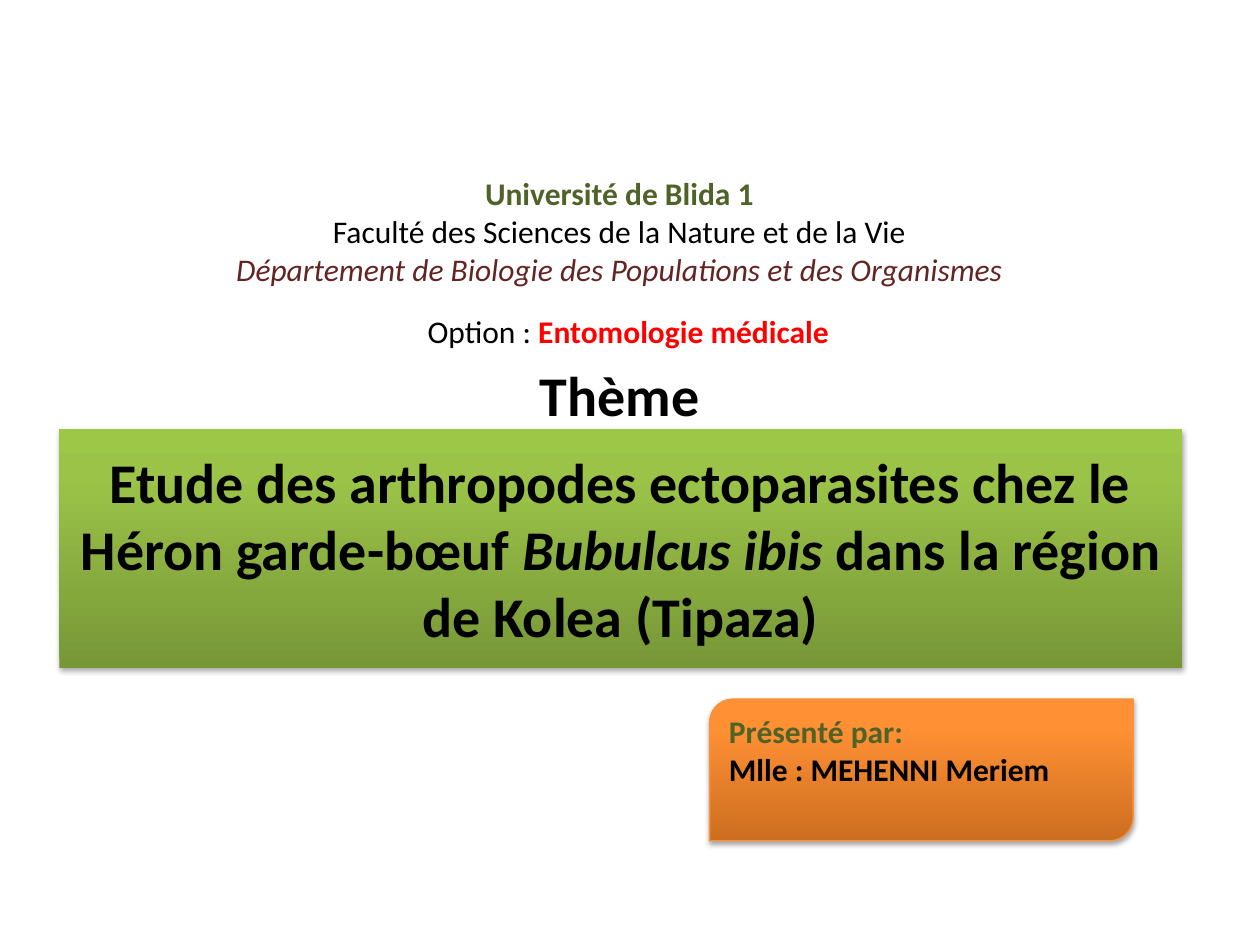
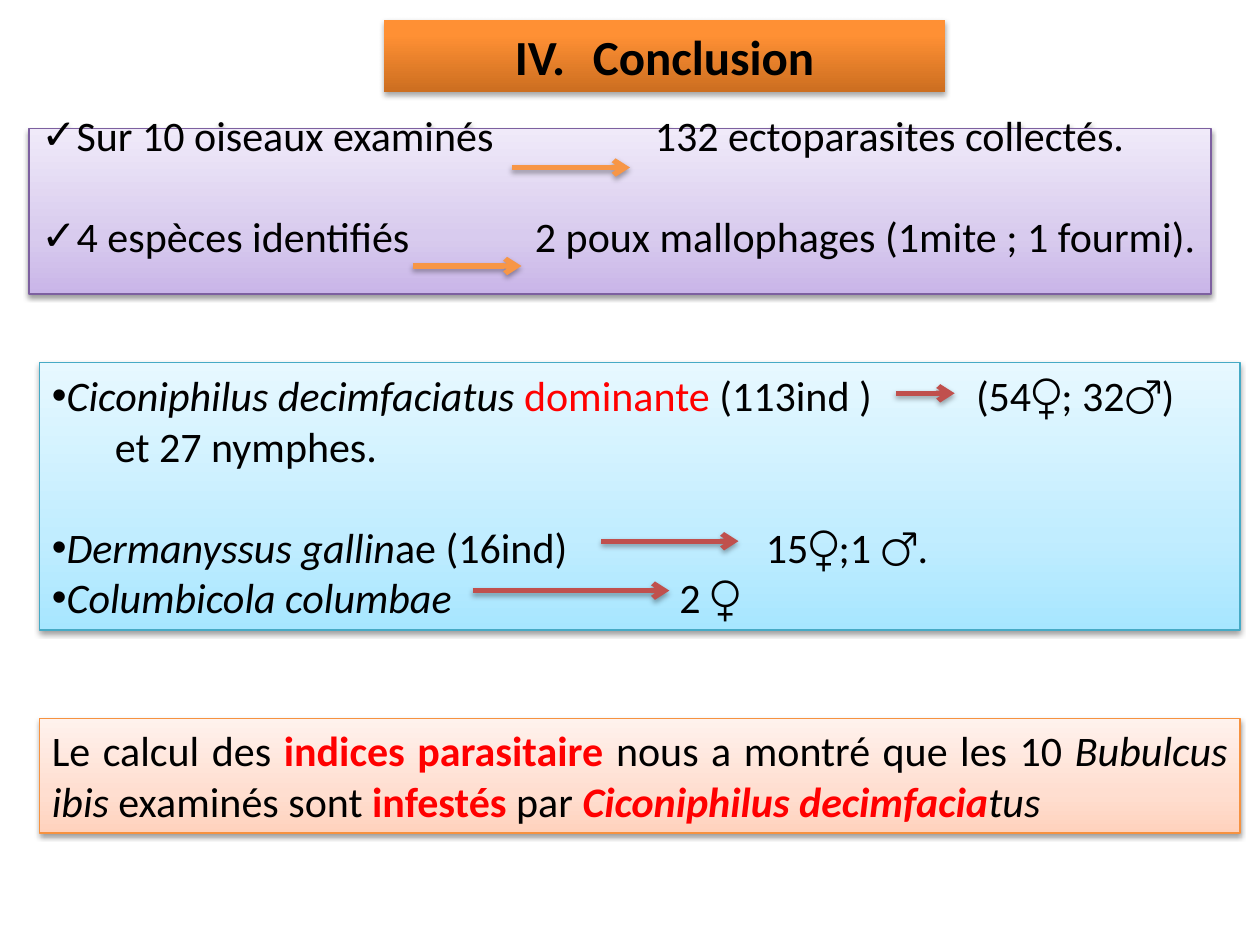
"""Build a thesis title slide and its conclusion slide."""
from copy import deepcopy
from dataclasses import dataclass

from lxml import etree
from pptx import Presentation
from pptx import util as u
from pptx.dml.color import RGBColor
from pptx.enum import shapes, text
from pptx.oxml.ns import qn


@dataclass(frozen=True)
class Theme:
    font = "Calibri"
    small, body, heading, display = 18, 24, 28, 32
    black, red, olive, maroon = "000000", "FF0000", "4F6228", "632523"
    arrow_orange, arrow_red = "F79646", "C0504D"
    orange_line, purple_line, blue_line = "F69240", "7D60A0", "46AAC5"
    green = ((0, "779737"), (0.8, "9BC348"), (1, "9DC746"))
    orange = ((0, "CC6E20"), (0.8, "FF9034"), (1, "FF9136"))
    purple = ((0, "C9B5E8"), (0.35, "D8CBEE"), (1, "F0EAF9"))
    blue = ((0, "A7E6FF"), (0.35, "C1EDFF"), (1, "E7F8FF"))
    peach = ((0, "FFD2BD"), (0.35, "FFDED0"), (1, "FFF2ED"))


T = Theme()
A = text.PP_ALIGN
TOP, MIDDLE = text.MSO_ANCHOR.TOP, text.MSO_ANCHOR.MIDDLE


def decorate(sp, stops=None, line=None, geometry=None, opacity=35):
    """Give a shape its outline, gradient, line and soft shadow."""
    props = sp._element.spPr
    if geometry:
        geom = etree.SubElement(props, qn("a:prstGeom"), prst=geometry)
        etree.SubElement(geom, qn("a:avLst"))
    if stops:
        sp.fill.gradient()
        sp.fill.gradient_angle = 90
        gs = props.find(".//" + qn("a:gsLst"))
        gs.append(deepcopy(gs[-1]))
        for stop, (position, color) in zip(sp.fill.gradient_stops, stops):
            stop.position = position
            stop.color.rgb = RGBColor.from_string(color)
        if line:
            sp.line.color.rgb = RGBColor.from_string(line)
            sp.line.width = u.Pt(0.75)
        else:
            sp.line.fill.background()
    effects = etree.SubElement(props, qn("a:effectLst"))
    shadow = etree.SubElement(effects, qn("a:outerShdw"), blurRad=str(u.Pt(3.1)),
                              dist=str(u.Pt(1.7)), dir="5400000", rotWithShape="0")
    color = etree.SubElement(shadow, qn("a:srgbClr"), val=T.black)
    etree.SubElement(color, qn("a:alpha"), val=str(opacity * 1000))


def write(sp, box, paragraphs, size, anchor=TOP, align=A.LEFT, wrap=True):
    """Place a shape and fill it with (runs, options) paragraphs."""
    for name, value in zip(("left", "top", "width", "height"), box):
        setattr(sp, name, u.Pt(value))
    tf = sp.text_frame
    for name, value in dict(word_wrap=wrap, auto_size=text.MSO_AUTO_SIZE.NONE,
                            vertical_anchor=anchor).items():
        setattr(tf, name, value)
    for i, (runs, options) in enumerate(paragraphs):
        p = tf.paragraphs[0] if i == 0 else tf.add_paragraph()
        p.alignment = align
        p.space_before = u.Pt(options.get("before", 0))
        ppr = p._p.get_or_add_pPr()
        indent = options.get("indent", 0)
        ppr.set("marL", str(u.Pt(indent)))
        ppr.set("indent", str(u.Pt(-indent)))
        if "number" in options:
            etree.SubElement(ppr, qn("a:buAutoNum"), type="romanUcPeriod",
                             startAt=str(options["number"]))
        elif "bullet" in options:
            etree.SubElement(ppr, qn("a:buChar"), char=options["bullet"])
        else:
            etree.SubElement(ppr, qn("a:buNone"))
        if "tab" in options:
            tabs = etree.SubElement(ppr, qn("a:tabLst"))
            etree.SubElement(tabs, qn("a:tab"), pos=str(u.Pt(options["tab"])), algn="l")
        for words, changes in runs:
            r = p.add_run()
            r.text = words
            fmt = dict(name=T.font, size=u.Pt(size), bold=False, italic=False,
                       color=T.black) | changes
            r.font.color.rgb = RGBColor.from_string(fmt.pop("color"))
            for name, value in fmt.items():
                setattr(r.font, name, value)


bold, italic = dict(bold=True), dict(italic=True)
strong_red = dict(bold=True, color=T.red)

prs = Presentation()
prs.slide_width, prs.slide_height = u.Pt(720), u.Pt(540)

s = prs.slides.add_slide(prs.slide_layouts[0])
university = s.placeholders[1]
write(university, (118, 96, 472, 75), [
    ([("Université de Blida 1", dict(bold=True, color=T.olive))], {}),
    ([("Faculté des Sciences de la Nature et de la Vie", {})], {}),
    ([("Département de Biologie des Populations et des Organismes",
       dict(italic=True, color=T.maroon))], {}),
], T.small, align=A.CENTER)

labels = (
    ((280, 202.5, 148, 46), [("Thème", bold)], T.display),
    ((236, 174.5, 246, 29), [("Option : ", {}), ("Entomologie médicale", strong_red)], T.small),
)
for box, runs, size in labels:
    label = s.shapes.add_textbox(0, 0, 0, 0)
    write(label, box, [(runs, {})], size, align=A.CENTER, wrap=False)

presenter = s.shapes.add_shape(shapes.MSO_SHAPE.ROUND_2_DIAG_RECTANGLE, 0, 0, 0, 0)
write(presenter, (405.5, 399.5, 242, 81), [
    ([("Présenté par:", dict(bold=True, color=T.olive))], {}),
    ([("Mlle : MEHENNI Meriem", bold)], {}),
], T.small)
decorate(presenter, T.orange, T.orange_line)

topic = s.shapes.title
write(topic, (34, 245, 641.5, 136.5), [([
    ("Etude des arthropodes ectoparasites chez le Héron garde-bœuf ", bold),
    ("Bubulcus ibis ", dict(bold=True, italic=True)),
    ("dans la région de Kolea (Tipaza)", bold),
], {})], T.display, anchor=MIDDLE, align=A.CENTER)
decorate(topic, T.green, geometry="roundRect")

s = prs.slides.add_slide(prs.slide_layouts[3])
heading = s.shapes.title
write(heading, (219.5, 11.5, 320.5, 41), [
    ([("Conclusion", bold)], dict(indent=44.6, number=4)),
], T.heading, align=A.CENTER)
decorate(heading, T.orange, geometry="round1Rect")

findings, species = s.placeholders[1], s.placeholders[2]
write(findings, (16.5, 73.5, 675.5, 94.5), [
    ([("Sur 10 oiseaux examinés\t132 ectoparasites collectés.", {})],
     dict(bullet="✓", tab=350.5)),
    ([("4 espèces identifiés\t2 poux mallophages (1mite ; 1 fourmi)", {}),
      (".", dict(name="Times New Roman"))],
     dict(bullet="✓", tab=282, before=29)),
], T.body, anchor=MIDDLE)
findings.text_frame.margin_right = 0
findings.text_frame.margin_bottom = u.Pt(33)
decorate(findings, T.purple, T.purple_line, opacity=38)

write(species, (22.5, 207, 686, 153), [
    ([("Ciconiphilus decimfaciatus ", italic), ("dominante", dict(color=T.red)),
      (" (113ind )\t(54♀; 32♂)", {})], dict(bullet="•", tab=528)),
    ([("\tet 27 nymphes.", {})], dict(tab=238.5)),
    ([("Dermanyssus gallin", italic), ("ae (16ind)\t15♀;1 ♂.", {})],
     dict(bullet="•", tab=408, before=29)),
    ([("Columbicola columbae", italic), ("\t2 ♀", {})], dict(bullet="•", tab=358.5)),
], T.body, anchor=MIDDLE)
decorate(species, T.blue, T.blue_line, opacity=38)

result = s.shapes.add_shape(shapes.MSO_SHAPE.RECTANGLE, 0, 0, 0, 0)
write(result, (22.5, 410.5, 686, 65.5), [([
    ("Le calcul des ", {}), ("indices parasitaire ", strong_red),
    ("nous a montré que les 10 ", {}), ("Bubulcus ibis", italic),
    (" examinés sont", {}), (" infestés ", strong_red), ("par ", {}),
    ("Ciconiphilus decimfacia", strong_red | italic), ("tus", italic),
], {})], T.body, align=A.JUSTIFY)
decorate(result, T.peach, T.orange_line, opacity=38)

arrows = (
    (292.5, 360, 95.75, T.arrow_orange),
    (236, 298, 152, T.arrow_orange),
    (512, 545.5, 224.75, T.arrow_red),
    (270, 382.5, 337.5, T.arrow_red),
    (343.5, 422, 309.25, T.arrow_red),
)
for start, end, y, color in arrows:
    arrow = s.shapes.add_connector(shapes.MSO_CONNECTOR.STRAIGHT,
                                   u.Pt(start), u.Pt(y), u.Pt(end), u.Pt(y))
    arrow.line.color.rgb = RGBColor.from_string(color)
    arrow.line.width = u.Pt(3)
    etree.SubElement(arrow.line._get_or_add_ln(), qn("a:tailEnd"), type="arrow")
    decorate(arrow)

prs.save("out.pptx")
